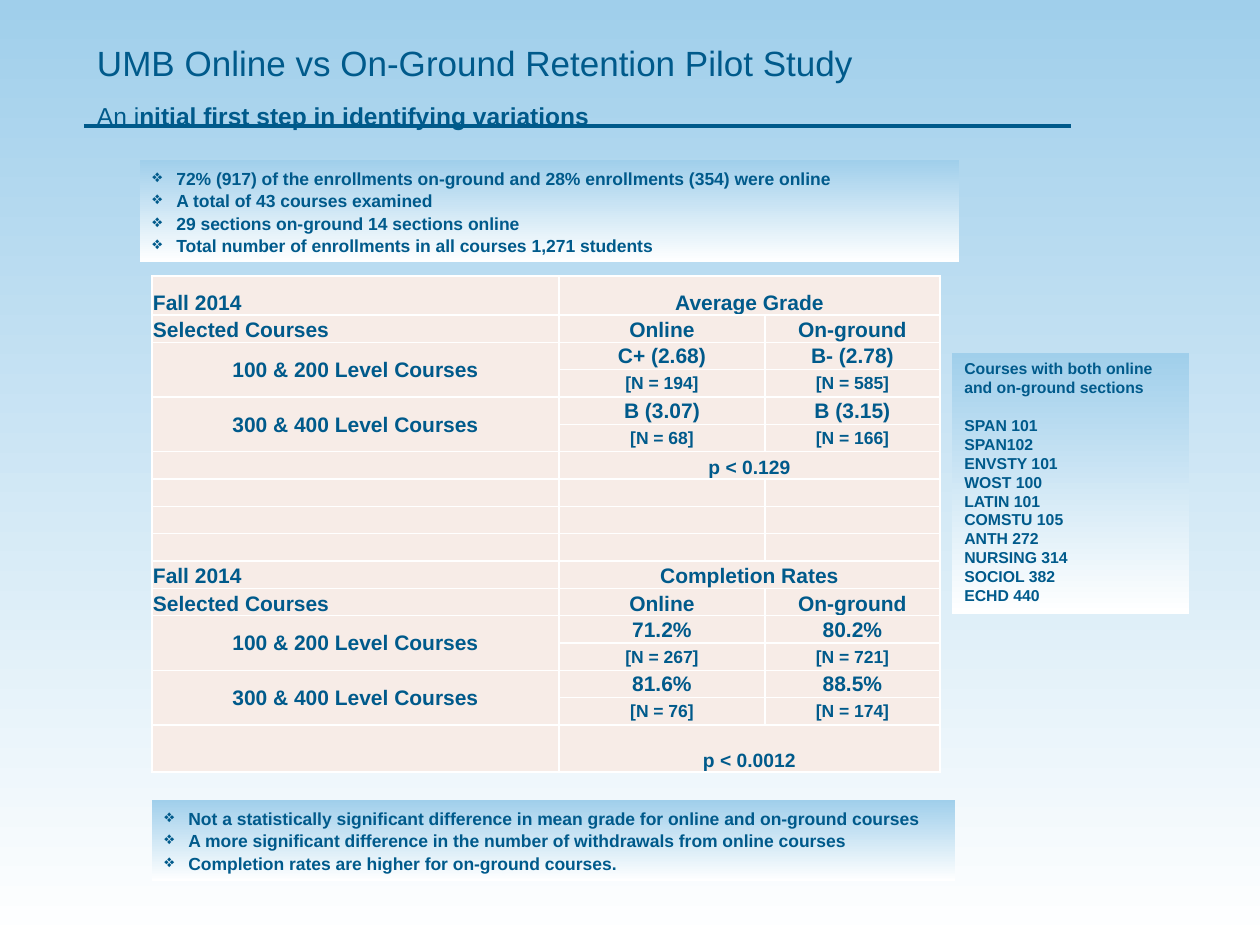
from dataclasses import dataclass

from lxml import etree
from pptx import Presentation
from pptx.dml.color import RGBColor
from pptx.enum.shapes import MSO_CONNECTOR, MSO_SHAPE
from pptx.enum.text import MSO_ANCHOR, MSO_AUTO_SIZE, PP_ALIGN
from pptx.oxml.ns import qn
from pptx.util import Emu, Pt

LEFT, MID = PP_ALIGN.LEFT, PP_ALIGN.CENTER
TOP, CENTRE, BASE = MSO_ANCHOR.TOP, MSO_ANCHOR.MIDDLE, MSO_ANCHOR.BOTTOM
RECT, LINE = MSO_SHAPE.RECTANGLE, MSO_CONNECTOR.STRAIGHT
NO_FIT = MSO_AUTO_SIZE.NONE
SCALE = 914400 / 126
NAVY, SKY, WHITE, CREAM = "005A8B", "A0CFEB", "FFFFFF", "F7ECE7"


@dataclass
class Box:
    x: int
    y: int
    w: int
    h: int
    lines: list[str]
    size: int = 10
    bullet: bool = True


@dataclass
class Group:
    """One half of the table, starting at a given row."""
    row: int
    name: str
    values: list[list[str]]
    test: str


BOXES = [
    Box(140, 160, 819, 102, [
        "72% (917) of the enrollments on-ground and 28% enrollments (354) were online",
        "A total of 43 courses examined",
        "29 sections on-ground 14 sections online",
        "Total number of enrollments in all courses 1,271 students"]),
    Box(152, 800, 803, 81, [
        "Not a statistically significant difference in mean grade for online and on-ground courses",
        "A more significant difference in the number of withdrawals from online courses",
        "Completion rates are higher for on-ground courses."]),
    Box(952, 353, 237, 261, [
        "Courses with both online and on-ground sections",
        "SPAN 101", "SPAN102", "ENVSTY 101", "WOST 100", "LATIN 101",
        "COMSTU 105", "ANTH 272", "NURSING 314", "SOCIOL 382", "ECHD 440"],
        size=9, bullet=False),
]
GROUPS = [
    Group(0, "Average Grade", [
        ["C+ (2.68)", "B- (2.78)"], ["[N = 194]", "[N = 585]"],
        ["B (3.07)", "B (3.15)"], ["[N = 68]", "[N = 166]"]], "p < 0.129"),
    Group(10, "Completion Rates", [
        ["71.2%", "80.2%"], ["[N = 267]", "[N = 721]"],
        ["81.6%", "88.5%"], ["[N = 76]", "[N = 174]"]], "p < 0.0012"),
]
COLS = [407, 206, 175]
ROWS = [39] + [410 / 15] * 15 + [47]


def px(n: float) -> Emu:
    return Emu(round(n * SCALE))


def color(code: str) -> RGBColor:
    return RGBColor.from_string(code)


def write(par, text: str, size: int = 12, bold: bool = True, align=LEFT) -> None:
    par.alignment = align
    run = par.add_run()
    run.text = text
    font = run.font
    font.name, font.size, font.bold = "Arial", Pt(size), bold
    font.color.rgb = color(NAVY)


def fade(fill) -> None:
    """Fill from sky blue at the top to white at the bottom."""
    fill.gradient()
    fill.gradient_angle = 270
    for stop, code, place in zip(fill.gradient_stops, (SKY, WHITE), (0, 1)):
        stop.color.rgb = color(code)
        stop.position = place


def draw_title(slide) -> None:
    title = slide.shapes.title
    title.left, title.top, title.width, title.height = map(px, (84, 31, 987, 136))
    frame = title.text_frame
    frame.word_wrap, frame.auto_size = True, NO_FIT
    frame.vertical_anchor = TOP
    frame.margin_left, frame.margin_top = px(13), px(10)
    head, sub = frame.paragraphs[0], frame.add_paragraph()
    write(head, "UMB Online vs On-Ground Retention Pilot Study", size=20, bold=False)
    sub.space_before = Pt(10)
    write(sub, "An i", size=14, bold=False)
    write(sub, "nitial first step in identifying variations", size=14)
    rule = slide.shapes.add_connector(LINE, px(84), px(126), px(1071), px(126))
    rule.line.color.rgb = color(NAVY)
    rule.line.width = Pt(2)
    etree.SubElement(rule._element.spPr, qn("a:effectLst"))


def draw_box(slide, box: Box) -> None:
    shape = slide.shapes.add_shape(RECT, *map(px, (box.x, box.y, box.w, box.h)))
    shape.shadow.inherit = False
    shape.line.fill.background()
    fade(shape.fill)
    frame = shape.text_frame
    frame.word_wrap = True
    frame.vertical_anchor = TOP
    for i, text in enumerate(box.lines):
        par = frame.add_paragraph() if i else frame.paragraphs[0]
        if box.bullet:
            props = par._p.get_or_add_pPr()
            props.set("marL", str(px(24)))
            props.set("indent", str(-px(24)))
            etree.SubElement(props, qn("a:buChar"), char="❖")
            par.line_spacing = 1.07
        elif i == 0:
            par.space_after = Pt(10.5)
        write(par, text, size=box.size)


def style_cell(cell) -> None:
    cell.margin_left = cell.margin_right = cell.margin_top = px(1)
    cell.margin_bottom = 0
    props = cell._tc.get_or_add_tcPr()
    for side in ("lnL", "lnR", "lnT", "lnB"):
        edge = etree.SubElement(props, qn(f"a:{side}"), w=str(Pt(1)))
        paint = etree.SubElement(edge, qn("a:solidFill"))
        etree.SubElement(paint, qn("a:srgbClr"), val=WHITE)
    cell.fill.solid()
    cell.fill.fore_color.rgb = color(CREAM)
    if not cell.text_frame.text:
        # An empty cell needs a small end mark so that its row stays low.
        etree.SubElement(cell.text_frame.paragraphs[0]._p,
                         qn("a:endParaRPr"), sz="1000")


def fill_cell(cell, text: str, size: int = 12, align=MID, anchor=BASE) -> None:
    cell.vertical_anchor = anchor
    write(cell.text_frame.paragraphs[0], text, size=size, align=align)


def fill_group(table, group: Group) -> None:
    top = group.row
    last = top + 6
    for row, text in ((top, group.name), (last, group.test)):
        table.cell(row, 1).merge(table.cell(row, 2))
        fill_cell(table.cell(row, 1), text, size=12 if row == top else 11)
    fill_cell(table.cell(top, 0), "Fall 2014", align=LEFT)
    fill_cell(table.cell(top + 1, 0), "Selected Courses", align=LEFT)
    for col, text in enumerate(("Online", "On-ground"), 1):
        fill_cell(table.cell(top + 1, col), text)
    for row, text in ((top + 2, "100 & 200 Level Courses"),
                      (top + 4, "300 & 400 Level Courses")):
        table.cell(row, 0).merge(table.cell(row + 1, 0))
        fill_cell(table.cell(row, 0), text, anchor=CENTRE)
    for i, pair in enumerate(group.values):
        for col, text in enumerate(pair, 1):
            fill_cell(table.cell(top + 2 + i, col), text,
                      size=10 if i % 2 else 12, anchor=CENTRE)


def draw_table(slide) -> None:
    table = slide.shapes.add_table(len(ROWS), len(COLS), px(152), px(276),
                                   px(sum(COLS)), px(sum(ROWS))).table
    for col, width in zip(table.columns, COLS):
        col.width = px(width)
    for row, height in zip(table.rows, ROWS):
        row.height = px(height)
    for group in GROUPS:
        fill_group(table, group)
    for cell in table.iter_cells():
        style_cell(cell)


def main() -> None:
    deck = Presentation()
    deck.slide_width, deck.slide_height = px(1260), px(945)
    slide = deck.slides.add_slide(deck.slide_layouts[5])
    fade(slide.background.fill)
    draw_title(slide)
    draw_table(slide)
    for box in BOXES:
        draw_box(slide, box)
    deck.save("out.pptx")


if __name__ == "__main__":
    main()
